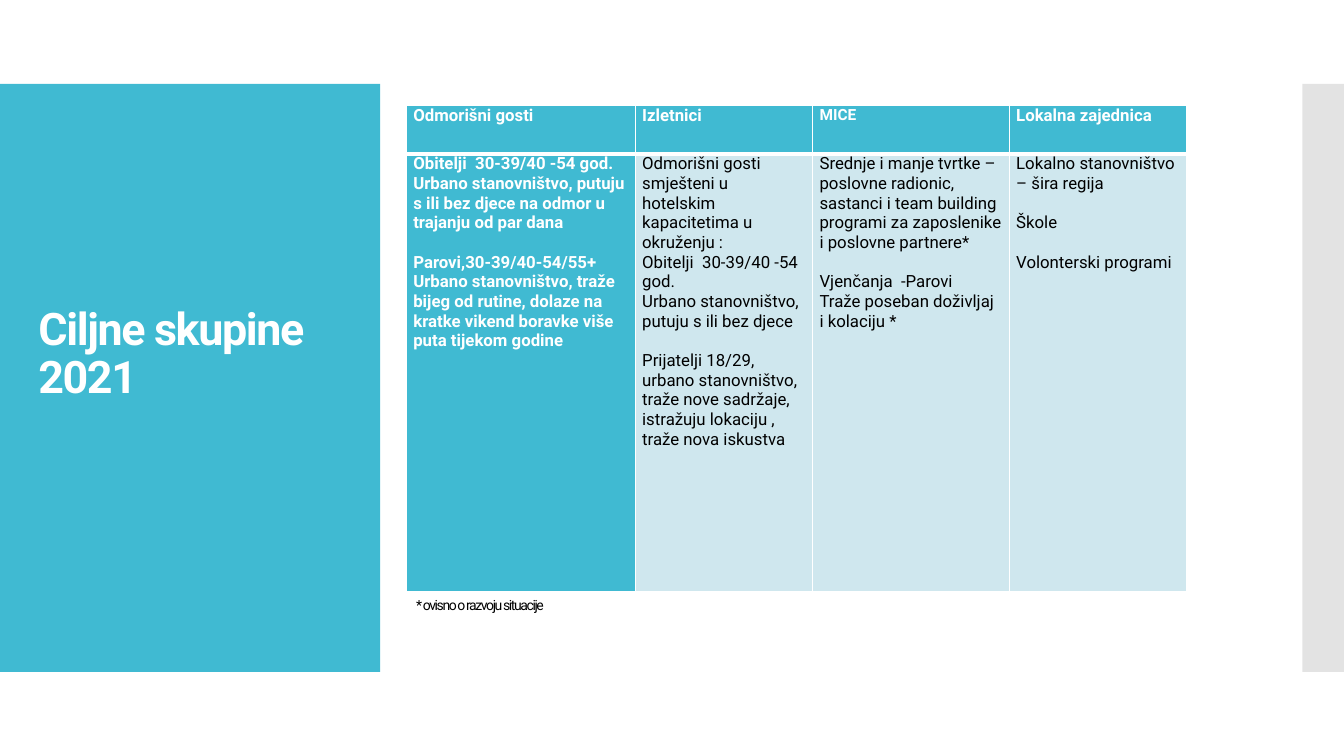
from lxml.etree import SubElement
from pptx import Presentation
from pptx.dml.color import RGBColor
from pptx.enum.shapes import MSO_SHAPE
from pptx.enum.text import MSO_ANCHOR, MSO_AUTO_SIZE, PP_ALIGN
from pptx.oxml import parse_xml
from pptx.oxml.ns import qn, nsdecls
from pptx.util import Inches, Pt

WIDE, HIGH = Inches(13.33), Inches(7.5)
TEAL, PALE, GREY = "40BAD2", "CFE7EE", "C8C8C8"
WHITE, BLACK = "FFFFFF", "000000"
FACE = "Roboto"
LEFT, TOP = 30.23, 14
COLS = [17.03, 13.2, 14.63, 13.2]
ROWS = [6.4, 57.87]
BAND = 11.11, 77.78

HEADS = [("Odmorišni gosti", 12), ("Izletnici", 12), ("MICE", 11),
         ("Lokalna zajednica", 12)]
GROUPS = [
    [["Obitelji  30-39/40 -54 god.",
      "Urbano stanovništvo, putuju s ili bez djece na odmor u trajanju od par dana"],
     ["Parovi,30-39/40-54/55+",
      "Urbano stanovništvo, traže bijeg od rutine, dolaze na kratke vikend "
      "boravke više puta tijekom godine"]],
    [["Odmorišni gosti smješteni u hotelskim kapacitetima u okruženju :",
      "Obitelji  30-39/40 -54 god.",
      "Urbano stanovništvo, putuju s ili bez djece"],
     ["Prijatelji 18/29, urbano stanovništvo, traže nove sadržaje, "
      "istražuju lokaciju , traže nova iskustva"]],
    [["Srednje i manje tvrtke – poslovne radionic, sastanci i team building "
      "programi za zaposlenike i poslovne partnere*"],
     ["Vjenčanja  -Parovi", "Traže poseban doživljaj i kolaciju *"]],
    [["Lokalno stanovništvo – šira regija"], ["Škole"], ["Volonterski programi"]],
]


def across(share):
    return round(WIDE * share / 100)


def down(share):
    return round(HIGH * share / 100)


def place(left, top, width, height):
    return across(left), down(top), across(width), down(height)


def color(target, code):
    target.rgb = RGBColor.from_string(code)


def paint(fill, code):
    fill.solid()
    color(fill.fore_color, code)


def style(para, size, code, bold=False):
    para.font.name = FACE
    para.font.size = Pt(size)
    para.font.bold = bold
    color(para.font.color, code)


def panel(slide, left, width, code, alpha=100):
    shape = slide.shapes.add_shape(MSO_SHAPE.RECTANGLE, *place(left, BAND[0], width, BAND[1]))
    shape.shadow.inherit = False
    shape.line.fill.background()
    paint(shape.fill, code)
    if alpha < 100:
        tint = shape.fill._xPr.find(qn("a:solidFill"))[0]
        SubElement(tint, qn("a:alpha"), val=str(alpha * 1000))


def label(shape, text, size, code, anchor, bold=False):
    frame = shape.text_frame
    frame.word_wrap = True
    frame.auto_size = MSO_AUTO_SIZE.NONE
    frame.vertical_anchor = anchor
    para = frame.paragraphs[0]
    para.text = text
    para.alignment = PP_ALIGN.LEFT
    style(para, size, code, bold)
    para.runs[0]._r.get_or_add_rPr().set("spc", "-100")
    return para


def border(cell, top, base):
    props = cell._tc.get_or_add_tcPr()
    for side, width in zip("LRTB", (1, 1, top, base)):
        props.append(parse_xml(
            f'<a:ln{side} {nsdecls("a")} w="{Pt(width)}"><a:solidFill>'
            f'<a:srgbClr val="{WHITE}"/></a:solidFill></a:ln{side}>'))


def fill_cell(cell, groups, size, back, ink, bold, edges):
    cell.margin_left = cell.margin_right = Inches(0.07)
    cell.margin_top = cell.margin_bottom = 0
    border(cell, *edges)
    paint(cell.fill, back)
    frame = cell.text_frame
    for part, group in enumerate(groups):
        for line, text in enumerate(group):
            first = part == line == 0
            para = frame.paragraphs[0] if first else frame.add_paragraph()
            para.text = text
            if part and not line:
                para.space_before = Pt(14)
            style(para, size, ink, bold)


def grid(slide):
    area = place(LEFT, TOP, sum(COLS), sum(ROWS))
    table = slide.shapes.add_table(len(ROWS), len(COLS), *area).table
    table.horz_banding = False
    for row, share in zip(table.rows, ROWS):
        row.height = down(share)
    for pos, share in enumerate(COLS):
        table.columns[pos].width = across(share)
        head, size = HEADS[pos]
        fill_cell(table.cell(0, pos), [[head]], size, TEAL, WHITE, True, (1, 3))
        lead = pos == 0
        back, ink = (TEAL, WHITE) if lead else (PALE, BLACK)
        fill_cell(table.cell(1, pos), GROUPS[pos], 12, back, ink, lead, (3, 1))


def main():
    deck = Presentation()
    deck.slide_width, deck.slide_height = WIDE, HIGH
    slide = deck.slides.add_slide(deck.slide_layouts[5])
    panel(slide, 0, 28.28, TEAL)
    panel(slide, 96.9, 3.1, GREY, 50)
    grid(slide)
    note = slide.shapes.add_textbox(*place(LEFT, TOP + sum(ROWS), 62.87, 3.6))
    label(note, "* ovisno o razvoju situacije", 10, BLACK, MSO_ANCHOR.MIDDLE)
    title = slide.shapes.title
    title.left, title.top, title.width, title.height = place(2.1, 16.4, 24.16, 37.6)
    para = label(title, "Ciljne skupine 2021", 32, WHITE, MSO_ANCHOR.BOTTOM, True)
    para.line_spacing = 0.9
    slide.shapes._spTree.append(title._element)
    deck.save("out.pptx")


if __name__ == "__main__":
    main()
